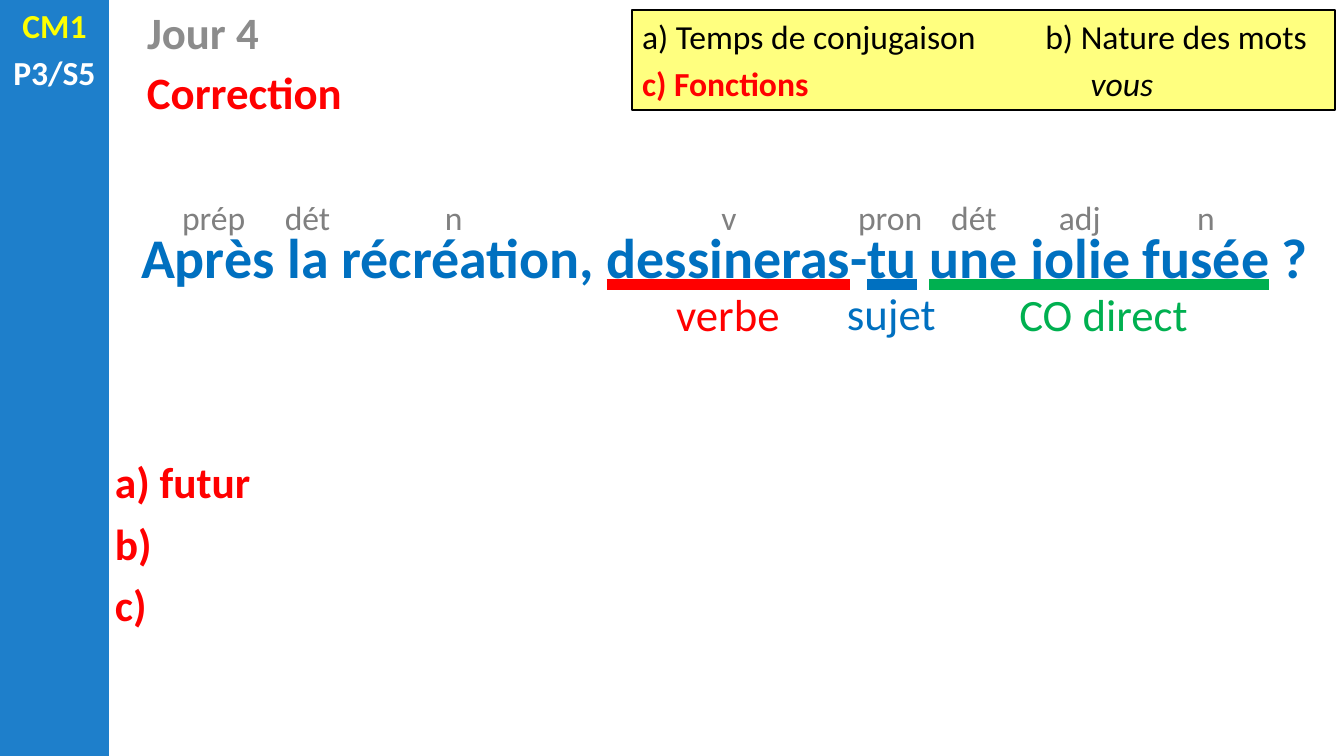
import pptx
import pptx.dml.color
import pptx.enum.shapes
import pptx.enum.text
import pptx.oxml
import pptx.oxml.ns
import pptx.util

COLORS = {
    "sidebar": "1E7FCB", "yellow": "FFFF00", "white": "FFFFFF", "day": "8C8C8C",
    "blue": "0070C0", "red": "FF0000", "green": "00B050", "gray": "808080", "black": "000000",
}
Inches, Points = pptx.util.Inches, pptx.util.Pt
CENTER, LEFT = pptx.enum.text.PP_ALIGN.CENTER, pptx.enum.text.PP_ALIGN.LEFT
MIDDLE = pptx.enum.text.MSO_ANCHOR.MIDDLE
RECTANGLE = pptx.enum.shapes.MSO_SHAPE.RECTANGLE
NAMESPACE = pptx.oxml.ns.nsdecls("a")
WIDTH, HEIGHT, SIDEBAR = 13.33, 7.5, 1.08


def style(paragraph, size, color, bold=False, align=LEFT):
    paragraph.alignment = align
    paragraph.space_before = Points(size * 0.2)
    paragraph.font.name = "Calibri"
    paragraph.font.size = Points(size)
    paragraph.font.bold = bold
    paragraph.font.color.rgb = pptx.dml.color.RGBColor.from_string(COLORS[color])


def add_text(left, top, width, height, text, size, color, bold=False, align=CENTER):
    frame = slide.shapes.add_textbox(*map(Inches, (left, top, width, height))).text_frame
    frame.word_wrap = True
    frame.text = text
    for paragraph in frame.paragraphs:
        style(paragraph, size, color, bold, align)
    return frame


presentation = pptx.Presentation()
presentation.slide_width = Inches(WIDTH)
presentation.slide_height = Inches(HEIGHT)
slide = presentation.slides.add_slide(presentation.slide_layouts[6])

sidebar = slide.shapes.add_shape(RECTANGLE, 0, 0, Inches(SIDEBAR), Inches(HEIGHT))
sidebar.shadow.inherit = False
sidebar.fill.solid()
sidebar.fill.fore_color.rgb = pptx.dml.color.RGBColor.from_string(COLORS["sidebar"])
sidebar.line.fill.background()

level = add_text(0, 0, SIDEBAR, 0.99, "CM1\nP3/S5", 24, "white", True)
level.paragraphs[0].font.color.rgb = pptx.dml.color.RGBColor.from_string(COLORS["yellow"])
add_text(1.36, 0, 7.91, 0.64, "Jour 4", 32, "day", True, LEFT)
add_text(1.36, 0.59, 4.83, 0.64, "Correction", 32, "red", True, LEFT)

sentence = add_text(1.04, 2.16, 12.29, 0.77, "", 40, "blue", True).paragraphs[0]
for words, underline in [
    ("Après la récréation, ", None), ("dessineras", "red"), ("-", None), ("tu", "blue"),
    (" ", None), ("une jolie fusée", "green"), (" ?", None),
]:
    run = sentence.add_run()
    run.text = words
    run.font.name = "Calibri"
    if underline:
        run.font.underline = pptx.enum.text.MSO_UNDERLINE.HEAVY_LINE
        run.font._element.insert(0, pptx.oxml.parse_xml(
            f'<a:uFill {NAMESPACE}><a:solidFill><a:srgbClr val="{COLORS[underline]}"/>'
            '</a:solidFill></a:uFill>'))

instructions = slide.shapes.add_shape(RECTANGLE, *map(Inches, (6.27, 0.1, 6.97, 0.99)))
instructions.shadow.inherit = False
instructions.fill.solid()
instructions.fill.fore_color.rgb = pptx.dml.color.RGBColor.from_string(COLORS["yellow"])
fill_color = instructions._element.spPr.find(".//" + pptx.oxml.ns.qn("a:srgbClr"))
fill_color.append(pptx.oxml.parse_xml(f'<a:alpha {NAMESPACE} val="50000"/>'))
instructions.line.color.rgb = pptx.dml.color.RGBColor.from_string(COLORS["black"])
instructions.line.width = Points(1.5)
frame = instructions.text_frame
frame.vertical_anchor = MIDDLE
frame.text = "a) Temps de conjugaison\tb) Nature des mots\nc) Fonctions"
for paragraph, color, bold, tab in zip(
        frame.paragraphs, ("black", "red"), (False, True), (4, 4.45)):
    style(paragraph, 24, color, bold)
    paragraph._p.pPr.insert(1, pptx.oxml.parse_xml(
        f'<a:tabLst {NAMESPACE}><a:tab pos="{Inches(tab)}" algn="l"/></a:tabLst>'))
example = frame.paragraphs[1].add_run()
example.text = "\tvous"
example.font.bold = False
example.font.italic = True
example.font.color.rgb = pptx.dml.color.RGBColor.from_string(COLORS["black"])

for word_class, left in [
    ("prép", 1.67), ("dét", 2.6), ("n", 4.05), ("v", 6.78),
    ("pron", 8.38), ("dét", 9.21), ("adj", 10.26), ("n", 11.51),
]:
    add_text(left, 1.9, 0.9, 0.5, word_class, 24, "gray")

for function, left, top, width, color in [
    ("verbe", 6.6, 2.8, 1.24, "red"), ("sujet", 8.22, 2.79, 1.24, "blue"),
    ("CO direct", 9.85, 2.8, 2.19, "green"),
]:
    add_text(left, top, width, 0.64, function, 32, color)

table = slide.shapes.add_table(1, 1, *map(Inches, (1.04, 4.49, 12.29, 1.82))).table
table.first_row = table.horz_banding = False
answers = table.cell(0, 0)
answers.fill.background()
answers.text = "a) futur\nb)\nc)"
for paragraph in answers.text_frame.paragraphs:
    style(paragraph, 31, "red", True)
    paragraph.space_before = Points(0)
    paragraph.space_after = Points(6)
for side in ("lnB", "lnT", "lnR", "lnL"):
    answers._tc.tcPr.insert(0, pptx.oxml.parse_xml(
        f'<a:{side} {NAMESPACE} w="0"><a:noFill/></a:{side}>'))

presentation.save("out.pptx")
